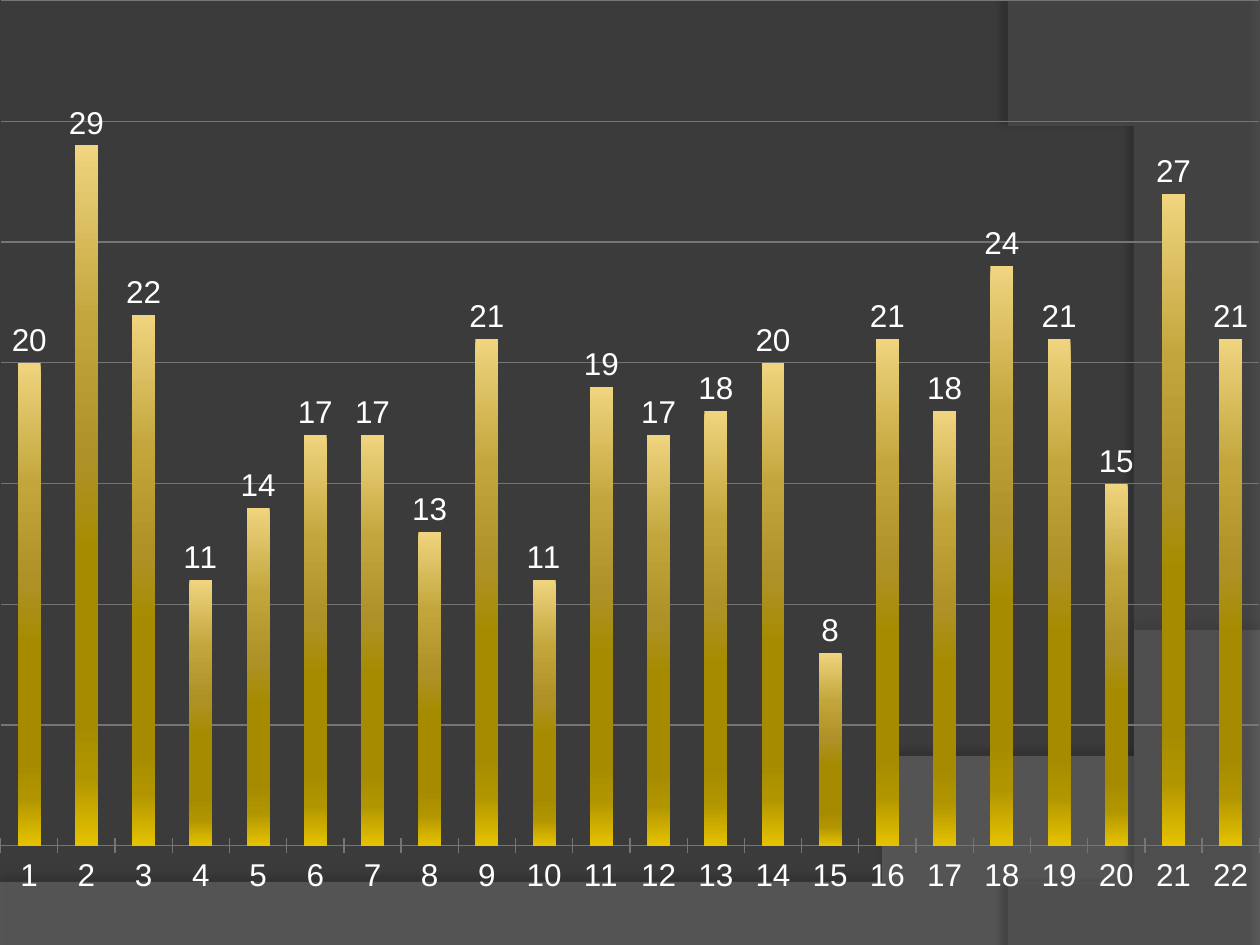
from lxml import etree
from pptx import Presentation
from pptx import util as u
from pptx.chart import data as chart_data
from pptx.dml import color
from pptx.enum import chart as chart_enum
from pptx.oxml import ns, parse_xml

WIDTH, HEIGHT = 10, 7.5
FONT = "Arial"
COLORS = {
    "background": "3B3B3B",
    "swoosh": "7F7F7F",
    "arc": "5E5E5E",
    "shadow": "000000",
    "text": "FFFFFF",
    "grid": "757575",
}
BAR_STOPS = [(0, "F0D47F"), (25, "C2A63C"), (45, "AE9228"), (58, "A68B00"),
             (82, "A68B00"), (90, "B09400"), (100, "E6C200")]
VALUES = [20, 29, 22, 11, 14, 17, 17, 13, 21, 11, 19,
          17, 18, 20, 8, 21, 18, 24, 21, 15, 27, 21]


def rgb(name):
    return color.RGBColor.from_string(COLORS[name])


def add_element(parent, tag, **attributes):
    element = etree.SubElement(parent, ns.qn(tag))
    for key, value in attributes.items():
        element.set(key, str(value))
    return element


def bezier(start, control_1, control_2, end, steps=60):
    points = []
    for step in range(steps + 1):
        t = step / steps
        weights = ((1 - t) ** 3, 3 * t * (1 - t) ** 2, 3 * t ** 2 * (1 - t), t ** 3)
        corners = zip(start, control_1, control_2, end)
        points.append(tuple(sum(w * c for w, c in zip(weights, axis)) for axis in corners))
    return points


def add_curved_panel(slide, points, fill, opacity, shadow_opacity, distance, angle):
    builder = slide.shapes.build_freeform(*points[0], scale=u.Inches(1))
    builder.add_line_segments(points[1:], close=True)
    shape = builder.convert_to_shape()
    shape.fill.solid()
    shape.fill.fore_color.rgb = rgb(fill)
    shape.line.fill.background()
    shape.shadow.inherit = False
    properties = shape._element.spPr
    fill_color = properties.find(ns.qn("a:solidFill"))[0]
    add_element(fill_color, "a:alpha", val=opacity * 1000)
    shadow = add_element(properties.find(ns.qn("a:effectLst")), "a:outerShdw",
                         blurRad=u.Pt(4), dist=u.Pt(distance), dir=angle * 60000,
                         algn="ctr", rotWithShape=0)
    shadow_color = add_element(shadow, "a:srgbClr", val=COLORS["shadow"])
    add_element(shadow_color, "a:alpha", val=shadow_opacity * 1000)


def set_plot_area(chart, width, height):
    plot_area = chart._chartSpace.chart.plotArea
    for old in plot_area.findall(ns.qn("c:layout")):
        plot_area.remove(old)
    layout = parse_xml(f"<c:layout {ns.nsdecls('c')}/>")
    plot_area.insert(0, layout)
    manual = add_element(layout, "c:manualLayout")
    settings = {"layoutTarget": "inner", "xMode": "edge", "yMode": "edge",
                "x": 0, "y": 0, "w": width, "h": height}
    for tag, value in settings.items():
        add_element(manual, f"c:{tag}", val=value)


def set_bar_gradient(series):
    series.format.fill.gradient()
    series.format.fill.gradient_angle = 270
    stops = series._element.spPr.find(ns.qn("a:gradFill")).find(ns.qn("a:gsLst"))
    for old in list(stops):
        stops.remove(old)
    for position, value in BAR_STOPS:
        stop = add_element(stops, "a:gs", pos=position * 1000)
        add_element(stop, "a:srgbClr", val=value)


def style_line(line):
    line.color.rgb = rgb("grid")
    line.width = u.Pt(0.75)


def add_column_chart(slide):
    data = chart_data.CategoryChartData()
    data.categories = [str(number) for number in range(1, len(VALUES) + 1)]
    data.add_series("Series 1", VALUES)
    chart = slide.shapes.add_chart(chart_enum.XL_CHART_TYPE.COLUMN_CLUSTERED, 0, 0,
                                   u.Inches(WIDTH), u.Inches(HEIGHT), data).chart
    chart.has_legend = False
    chart.has_title = False
    chart.font.name = FONT
    chart.font.size = u.Pt(18)
    chart.font.color.rgb = rgb("text")
    set_plot_area(chart, 1, 0.895)

    chart.category_axis.major_tick_mark = chart_enum.XL_TICK_MARK.CROSS
    style_line(chart.category_axis.format.line)
    value_axis = chart.value_axis
    value_axis.minimum_scale, value_axis.maximum_scale = 0, 35
    value_axis.major_unit = 5
    value_axis.has_major_gridlines = True
    style_line(value_axis.major_gridlines.format.line)
    value_axis.visible = False

    plot = chart.plots[0]
    plot.gap_width = 150
    plot.vary_by_categories = False
    plot.has_data_labels = True
    labels = plot.data_labels
    labels.show_value = True
    labels.position = chart_enum.XL_LABEL_POSITION.OUTSIDE_END
    labels.font.name = FONT
    labels.font.size = u.Pt(18)
    labels.font.color.rgb = rgb("text")
    set_bar_gradient(plot.series[0])


def main():
    """Build a slide with one full-size column chart over two curved panels."""
    presentation = Presentation()
    presentation.slide_width = u.Inches(WIDTH)
    presentation.slide_height = u.Inches(HEIGHT)
    slide = presentation.slides.add_slide(presentation.slide_layouts[6])
    slide.background.fill.solid()
    slide.background.fill.fore_color.rgb = rgb("background")

    swoosh = bezier((WIDTH, 5.2), (5.59, 7.29), (3.91, 7.19), (0, 7.05))
    add_curved_panel(slide, swoosh + [(0, HEIGHT), (WIDTH, HEIGHT)],
                     "swoosh", 45, 35, 3.5, 270)
    arc = bezier((8.21, HEIGHT), (9.35, 6.19), (10.18, 3), (8, 0))
    add_curved_panel(slide, arc + [(WIDTH, 0), (WIDTH, HEIGHT)],
                     "arc", 40, 45, 4, 180)
    add_column_chart(slide)
    presentation.save("out.pptx")


if __name__ == "__main__":
    main()
